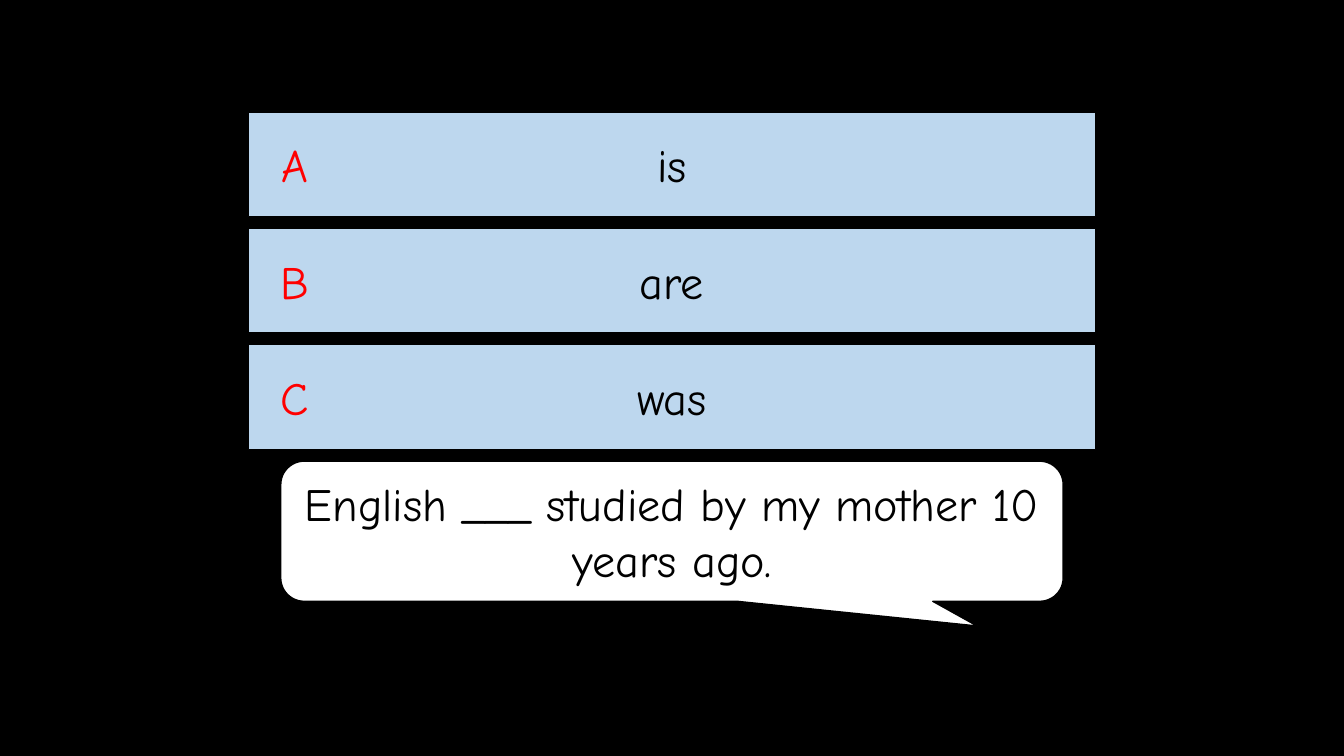
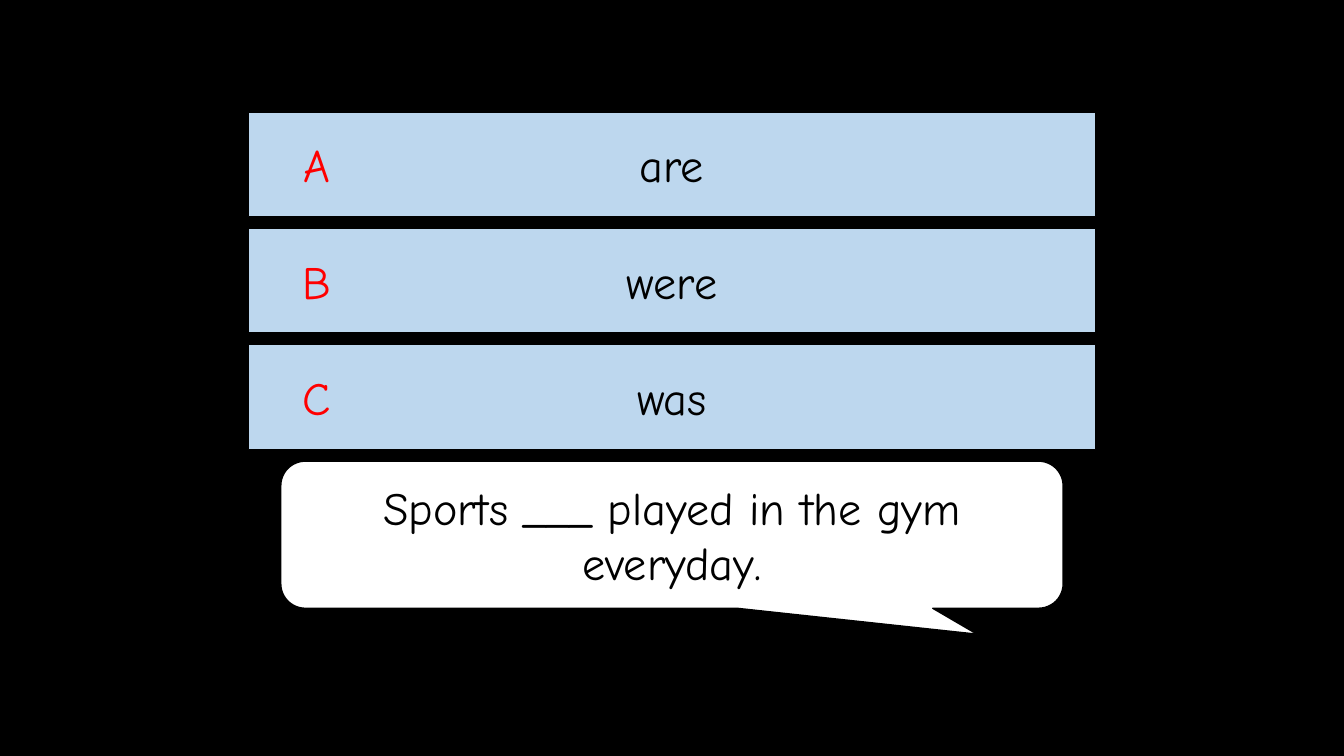
from dataclasses import dataclass

from pptx import Presentation
from pptx.dml.color import RGBColor
from pptx.enum.shapes import MSO_SHAPE
from pptx.enum.text import MSO_ANCHOR, PP_ALIGN
from pptx.util import Inches, Pt

RECTANGLE = MSO_SHAPE.RECTANGLE
SPEECH_BUBBLE = MSO_SHAPE.ROUNDED_RECTANGULAR_CALLOUT
MIDDLE = MSO_ANCHOR.MIDDLE
CENTER = PP_ALIGN.CENTER


@dataclass(frozen=True)
class Theme:
    black: RGBColor = RGBColor(0, 0, 0)
    white: RGBColor = RGBColor(255, 255, 255)
    answer_blue: RGBColor = RGBColor(0xBD, 0xD7, 0xEE)
    letter_red: RGBColor = RGBColor(255, 0, 0)
    font: str = "Comic Neue"
    text_size: Pt = Pt(33)
    outline: Pt = Pt(1)


THEME = Theme()

SLIDE_W, SLIDE_H = Inches(13.33), Inches(7.5)
ANSWER_W, ANSWER_H = Inches(8.4), Inches(1.04)
ANSWER_LEFT = (SLIDE_W - ANSWER_W) // 2
ANSWER_TOP = Inches(1.11)
ROW_STEP = Inches(1.155)
LETTER_W, LETTER_H = Inches(0.89), Inches(0.73)
BUBBLE_W = Inches(7.76)
BUBBLE_LEFT = (SLIDE_W - BUBBLE_W) // 2
BUBBLE_TOP = ANSWER_TOP + 3 * ROW_STEP
BUBBLE_TAIL = (0.39, 0.676, 0.167)

QUESTIONS = [
    ("English ___ studied by my mother 10 years ago.",
     ("is", "are", "was"), Inches(1.39), Inches(2.48)),
    ("Sports ___ played in the gym everyday.",
     ("are", "were", "was"), Inches(1.46), Inches(2.7)),
]


def write(shape, text, color=THEME.black, size=THEME.text_size, align=CENTER):
    frame = shape.text_frame
    frame.word_wrap = True
    frame.vertical_anchor = MIDDLE
    paragraph = frame.paragraphs[0]
    paragraph.alignment = align
    run = paragraph.add_run()
    run.text = text
    run.font.name = THEME.font
    run.font.size = size
    run.font.color.rgb = color


def add_panel(slide, kind, left, top, width, height, fill):
    panel = slide.shapes.add_shape(kind, left, top, width, height)
    panel.shadow.inherit = False
    panel.fill.solid()
    panel.fill.fore_color.rgb = fill
    panel.line.color.rgb = THEME.black
    panel.line.width = THEME.outline
    return panel


deck = Presentation()
deck.slide_width, deck.slide_height = SLIDE_W, SLIDE_H
backdrop = deck.slide_master.background.fill
backdrop.solid()
backdrop.fore_color.rgb = THEME.black
blank = deck.slide_layouts[6]

for question, answers, bubble_height, letter_left in QUESTIONS:
    slide = deck.slides.add_slide(blank)

    bubble = add_panel(slide, SPEECH_BUBBLE, BUBBLE_LEFT, BUBBLE_TOP,
                       BUBBLE_W, bubble_height, THEME.white)
    for index, value in enumerate(BUBBLE_TAIL):
        bubble.adjustments[index] = value
    write(bubble, question)

    for row, (letter, answer) in enumerate(zip("ABC", answers)):
        top = ANSWER_TOP + row * ROW_STEP
        answer_bar = add_panel(slide, RECTANGLE, ANSWER_LEFT, top,
                               ANSWER_W, ANSWER_H, THEME.answer_blue)
        write(answer_bar, answer)
        letter_top = top + (ANSWER_H - LETTER_H) // 2
        letter_label = slide.shapes.add_textbox(letter_left, letter_top, LETTER_W, LETTER_H)
        write(letter_label, letter, color=THEME.letter_red)

deck.save("out.pptx")
